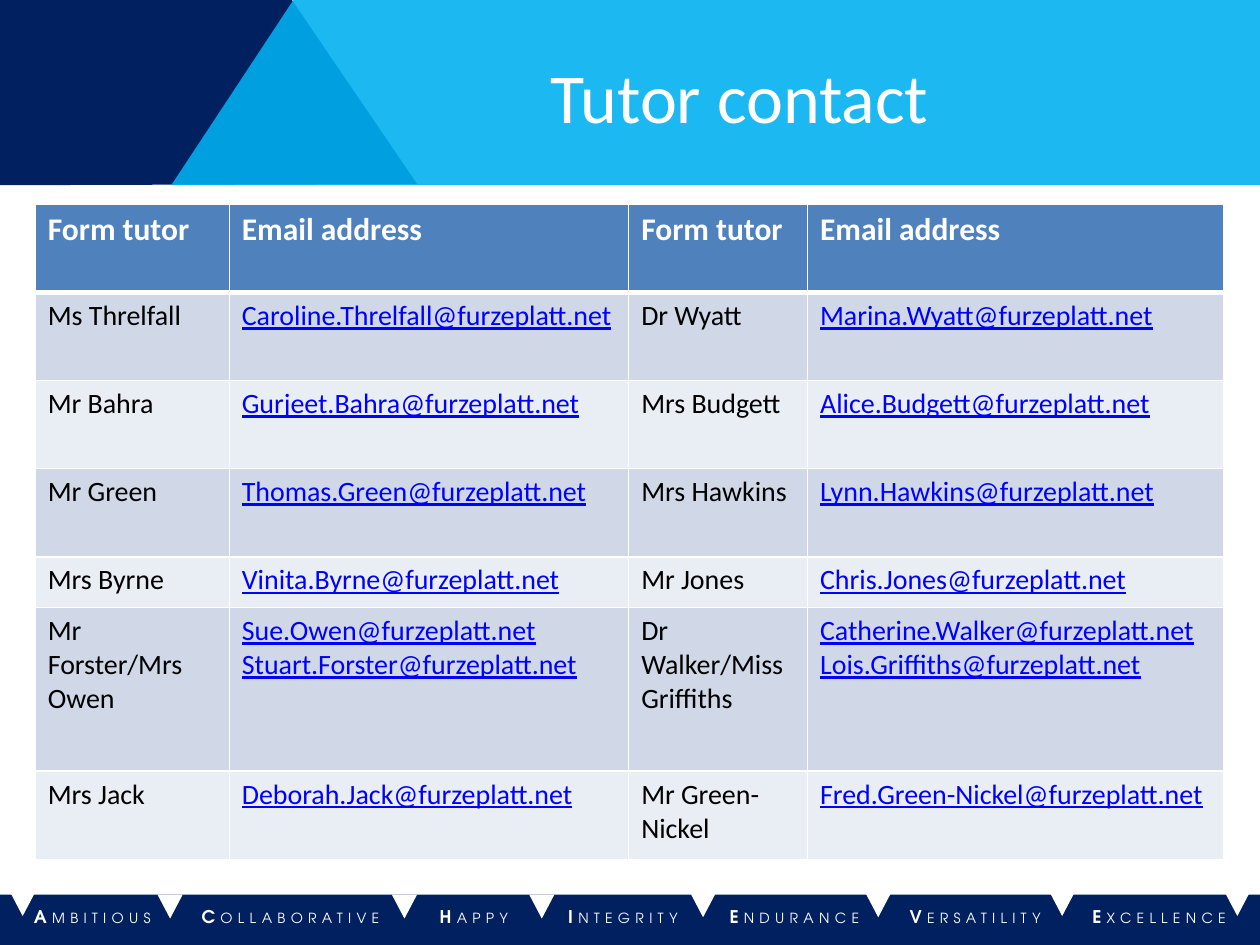
from pptx import Presentation
from pptx.dml.color import RGBColor
from pptx.enum.shapes import MSO_SHAPE as Shape
from pptx.enum.text import MSO_ANCHOR as Anchor, PP_ALIGN as Align
from pptx.oxml.ns import qn
from pptx.util import Inches, Pt
from lxml.etree import SubElement

COLORS = {
    "navy": "002060", "sky": "00B0F0", "white": "FFFFFF", "black": "000000",
    "link": "0000FF", "header": "4F81BD", "odd": "D0D8E8", "even": "E9EDF4",
}
BODY_FONT, VALUES_FONT = "Calibri", "TeX Gyre Adventor"

TITLE = "Tutor contact"
HEADINGS = ("Form tutor", "Email address") * 2
TUTORS = [
    ("Ms Threlfall", "Caroline.Threlfall@furzeplatt.net",
     "Dr Wyatt", "Marina.Wyatt@furzeplatt.net"),
    ("Mr Bahra", "Gurjeet.Bahra@furzeplatt.net",
     "Mrs Budgett", "Alice.Budgett@furzeplatt.net"),
    ("Mr Green", "Thomas.Green@furzeplatt.net",
     "Mrs Hawkins", "Lynn.Hawkins@furzeplatt.net"),
    ("Mrs Byrne", "Vinita.Byrne@furzeplatt.net",
     "Mr Jones", "Chris.Jones@furzeplatt.net"),
    ("Mr Forster/Mrs Owen", "Sue.Owen@furzeplatt.net\nStuart.Forster@furzeplatt.net",
     "Dr Walker/Miss Griffiths",
     "Catherine.Walker@furzeplatt.net\nLois.Griffiths@furzeplatt.net"),
    ("Mrs Jack", "Deborah.Jack@furzeplatt.net",
     "Mr Green-Nickel", "Fred.Green-Nickel@furzeplatt.net"),
]
COLUMN_WIDTHS = (1.54, 3.17, 1.42, 3.3)
ROW_HEIGHTS = (0.7, 0.7, 0.7, 0.7, 0.4, 1.3, 0.7)
VALUES = [
    ("AMBITIOUS", 0.27), ("COLLABORATIVE", 1.6), ("HAPPY", 3.49), ("INTEGRITY", 4.51),
    ("ENDURANCE", 5.79), ("VERSATILITY", 7.22), ("EXCELLENCE", 8.67),
]
NOTCHES = [(0.08, 7.08), (1.25, 7.1), (3.11, 7.1), (4.2, 7.1),
           (5.48, 7.09), (6.87, 7.09), (8.33, 7.08), (9.72, 7.08)]
NAVY_BANNER = [(-0.04, 1.47), (-0.04, 0), (2.31, -0.01), (3.31, 1.46)]
SKY_BANNER = [(1.36, 1.47), (2.33, 0), (10, 0), (10, 1.47)]


def rgb(name):
    return RGBColor.from_string(COLORS[name])


def paint(shape, color):
    shape.shadow.inherit = False
    shape.fill.solid()
    shape.fill.fore_color.rgb = rgb(color)
    shape.line.fill.background()
    return shape


def style(font, size, color, face=BODY_FONT, bold=False):
    font.name, font.size, font.bold = face, Pt(size), bold
    font.color.rgb = rgb(color)


def add_banner(shapes, corners, color):
    points = [(Inches(x), Inches(y)) for x, y in corners]
    builder = shapes.build_freeform(*points[0])
    builder.add_line_segments(points[1:], close=True)
    return paint(builder.convert_to_shape(), color)


def add_preset(shapes, preset, color, *box):
    return paint(shapes.add_shape(preset, *map(Inches, box)), color)


def add_text_frame(shapes, *box):
    frame = shapes.add_textbox(*map(Inches, box)).text_frame
    frame.word_wrap = True
    return frame


def add_footer(shapes):
    add_preset(shapes, Shape.RECTANGLE, "navy", 0, 7.1, 10, 0.4)
    frame = add_text_frame(shapes, 0, 7.14, 10, 0.35)
    start = VALUES[0][1]
    frame.margin_left, frame.margin_right = Inches(start), 0
    line = frame.paragraphs[0]
    tabs = SubElement(line._p.get_or_add_pPr(), qn("a:tabLst"))
    for word, left in VALUES:
        if left > start:
            SubElement(tabs, qn("a:tab"), pos=str(Inches(left - start)), algn="l")
        initial = word[0] if left == start else "\t" + word[0]
        for text, size, bold in ((initial, 10, True), (word[1:], 8, False)):
            run = line.add_run()
            run.text = text
            style(run.font, size, "white", VALUES_FONT, bold)
            run.font._element.set("spc", "300")
    for left, top in NOTCHES:
        add_preset(shapes, Shape.ISOSCELES_TRIANGLE, "white", left, top, 0.2, 0.19).rotation = 180


def add_borders(cell, row):
    widths = {"L": 1, "R": 1, "T": 3 if row == 1 else 1, "B": 3 if row == 0 else 1}
    for side, width in widths.items():
        border = SubElement(cell._tc.get_or_add_tcPr(), qn("a:ln" + side), w=str(Pt(width)))
        SubElement(SubElement(border, qn("a:solidFill")), qn("a:srgbClr"), val=COLORS["white"])


def add_contacts(shapes):
    rows = [HEADINGS, *TUTORS]
    table = shapes.add_table(
        len(rows), len(HEADINGS), Inches(0.28), Inches(1.62),
        Inches(sum(COLUMN_WIDTHS)), Inches(sum(ROW_HEIGHTS))).table
    for column, width in zip(table.columns, COLUMN_WIDTHS):
        column.width = Inches(width)
    for r, (entries, height) in enumerate(zip(rows, ROW_HEIGHTS)):
        table.rows[r].height = Inches(height)
        for c, entry in enumerate(entries):
            cell = table.cell(r, c)
            add_borders(cell, r)
            cell.fill.solid()
            cell.fill.fore_color.rgb = rgb("header" if r == 0 else "odd" if r % 2 else "even")
            cell.text = entry
            is_email = r > 0 and c % 2 == 1
            for paragraph in cell.text_frame.paragraphs:
                if r == 0:
                    style(paragraph.font, 18, "white", bold=True)
                else:
                    style(paragraph.font, 16, "link" if is_email else "black")
                paragraph.font.underline = is_email


def main():
    deck = Presentation()
    deck.slide_width, deck.slide_height = Inches(10), Inches(7.5)
    shapes = deck.slides.add_slide(deck.slide_layouts[6]).shapes

    add_banner(shapes, NAVY_BANNER, "navy")
    sky = add_banner(shapes, SKY_BANNER, "sky")
    sky_color = sky.fill._xPr.find(qn("a:solidFill"))[0]
    SubElement(sky_color, qn("a:alpha"), val="89000")
    add_footer(shapes)

    title = add_text_frame(shapes, 2.24, 0.13, 7.26, 1.25)
    title.vertical_anchor = Anchor.MIDDLE
    title.text = TITLE
    title.paragraphs[0].alignment = Align.CENTER
    style(title.paragraphs[0].font, 40, "white")

    add_contacts(shapes)
    deck.save("out.pptx")


if __name__ == "__main__":
    main()
